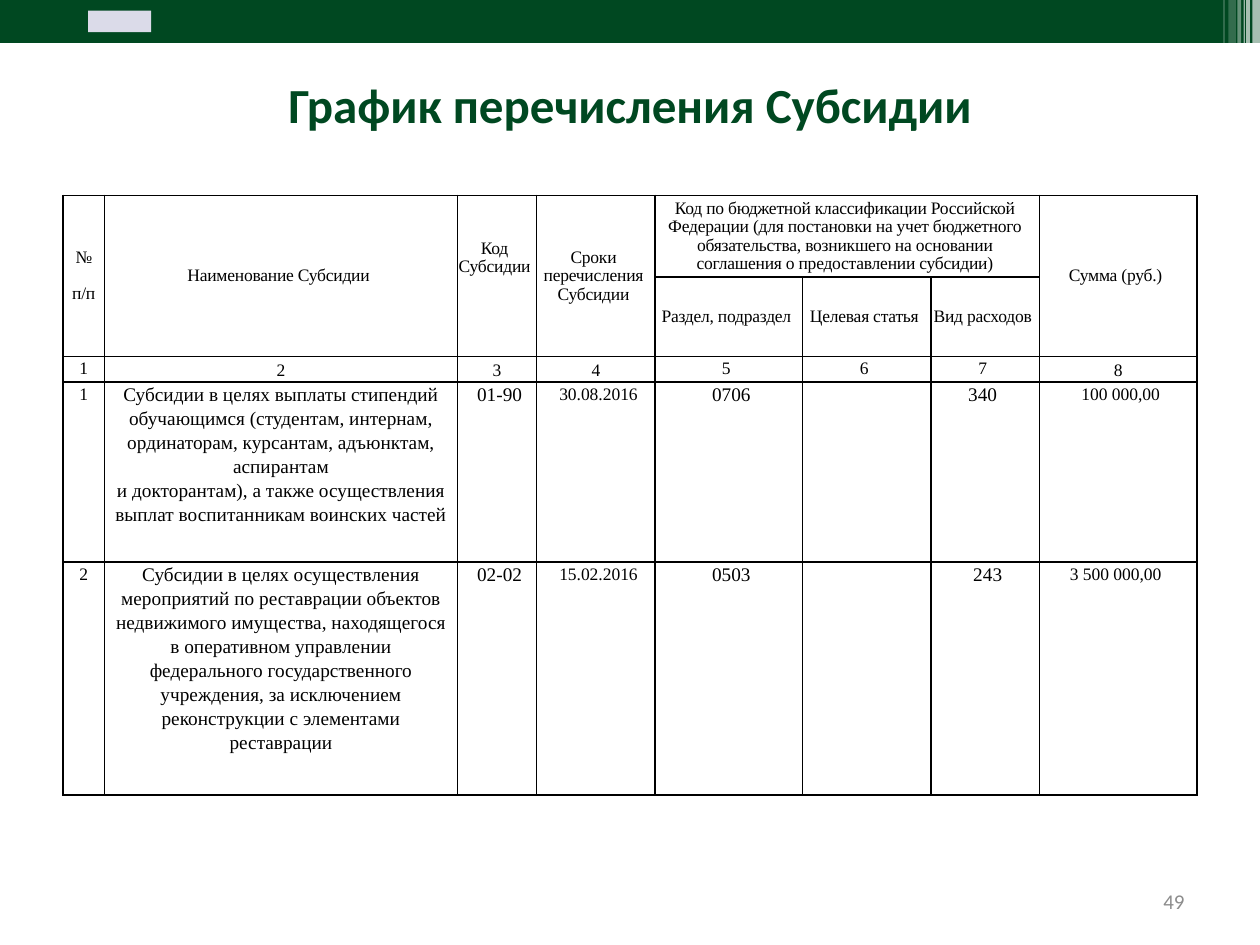
from collections import namedtuple

from lxml import etree
from pptx import Presentation
from pptx.dml.color import RGBColor
from pptx.enum.shapes import MSO_SHAPE
from pptx.enum.text import MSO_ANCHOR, PP_ALIGN
from pptx.oxml.ns import qn
from pptx.util import Inches, Pt

RECTANGLE = MSO_SHAPE.RECTANGLE
TOP, MIDDLE = MSO_ANCHOR.TOP, MSO_ANCHOR.MIDDLE
CENTER, RIGHT = PP_ALIGN.CENTER, PP_ALIGN.RIGHT

COLORS = {"green": "004821", "white": "FFFFFF", "pale": "DBDBE9",
          "gray": "8C8C8C", "black": "000000"}
WIDTH, HEIGHT = 10, 7.5
SANS, SERIF = "Calibri", "Times New Roman"

Box = namedtuple("Box", "left top width height")
Style = namedtuple("Style", "size leading after anchor left right tracking")

HEAD = Style(10, 0.96, 10, MIDDLE, 0, 0.04, -10)
EDGE = HEAD._replace(right=0)
MARK = Style(10, 1.15, 10, MIDDLE, 0, 0, 0)
SMALL = MARK._replace(anchor=TOP)
BODY = Style(11, 1.12, 0, TOP, 0.07, 0.07, 0)
SMALL_RIGHT = SMALL._replace(left=0.04)
SMALL_LEFT = SMALL._replace(right=0.04)
BODY_RIGHT = BODY._replace(left=0.11)
BODY_LEFT = BODY._replace(right=0.11)

COLUMNS = [0.33, 2.8, 0.63, 0.94, 1.17, 1.02, 0.86, 1.25]
ROWS = [0.65, 0.63, 0.2, 1.43, 1.85]
MERGES = [(0, column, 1, column) for column in (0, 1, 2, 3, 7)] + [(0, 4, 0, 6)]
STYLES = [
    [EDGE] + [HEAD] * 7,
    [HEAD] * 8,
    [SMALL] + [MARK] * 3 + [HEAD] * 3 + [MARK],
    [SMALL, BODY, BODY_RIGHT, SMALL_RIGHT, BODY_RIGHT, BODY, BODY_LEFT, SMALL_RIGHT],
    [SMALL, BODY, BODY_RIGHT, SMALL_RIGHT, BODY_RIGHT, BODY, BODY_RIGHT, SMALL_LEFT],
]
TEXTS = [
    ["№\nп/п", "Наименование Субсидии", "Код Субсидии",
     "Сроки перечисления Субсидии",
     "Код по бюджетной классификации Российской Федерации (для постановки на учет "
     "бюджетного обязательства, возникшего на основании соглашения о предоставлении "
     "субсидии)", "", "", "Сумма (руб.)"],
    ["", "", "", "", "Раздел, подраздел", "Целевая статья", "Вид расходов", ""],
    [str(number) for number in range(1, 9)],
    ["1", "Субсидии в целях выплаты стипендий обучающимся (студентам, интернам, "
     "ординаторам, курсантам, адъюнктам, аспирантам\nи докторантам), а также "
     "осуществления выплат воспитанникам воинских частей",
     "01-90", "30.08.2016", "0706", "", "340", "100 000,00"],
    ["2", "Субсидии в целях осуществления мероприятий по реставрации объектов "
     "недвижимого имущества, находящегося\nв оперативном управлении федерального "
     "государственного учреждения, за исключением реконструкции с элементами "
     "реставрации", "02-02", "15.02.2016", "0503", "", "243", "3 500 000,00"],
]


def emu(box):
    return [Inches(length) for length in box]


def add_span(para, text, font, size, color, bold=False):
    span = para.add_run()
    span.text = text
    span.font.name = font
    span.font.size = Pt(size)
    span.font.bold = bold
    span.font.color.rgb = RGBColor.from_string(COLORS[color])
    return span


def add_block(page, box, color, opacity=100):
    block = page.shapes.add_shape(RECTANGLE, *emu(box))
    block.shadow.inherit = False
    block.line.fill.background()
    block.fill.solid()
    block.fill.fore_color.rgb = RGBColor.from_string(COLORS[color])
    if opacity < 100:
        tint = block.fill._xPr.find(".//" + qn("a:srgbClr"))
        etree.SubElement(tint, qn("a:alpha"), val=str(opacity * 1000))


def add_banner(page, box):
    add_block(page, box, "green")
    stripes = [(0.06, 0.06, 65), (0.11, 0.03, 65), (0.13, 0.01, 60),
               (0.18, 0.03, 40), (0.25, 0.06, 20), (0.29, 0.01, 30)]
    for offset, width, opacity in stripes:
        left = box.left + box.width - offset
        add_block(page, Box(left, box.top, width, box.height), "white", opacity)
    emblem = Box(box.left + 0.07 * box.width, box.top + 0.25 * box.height,
                 0.05 * box.width, 0.5 * box.height)
    add_block(page, emblem, "pale")


def add_label(page, box, text, size, color, align, bold=False):
    frame = page.shapes.add_textbox(*emu(box)).text_frame
    frame.word_wrap = True
    frame.vertical_anchor = MIDDLE
    para = frame.paragraphs[0]
    para.alignment = align
    add_span(para, text, SANS, size, color, bold)


def add_borders(cell):
    properties = cell._tc.get_or_add_tcPr()
    for position, side in enumerate(("lnL", "lnR", "lnT", "lnB")):
        line = etree.Element(qn("a:" + side), w=str(Pt(1)))
        fill = etree.SubElement(line, qn("a:solidFill"))
        etree.SubElement(fill, qn("a:srgbClr"), val=COLORS["black"])
        properties.insert(position, line)


def fill_cell(cell, text, style):
    cell.fill.background()
    add_borders(cell)
    cell.vertical_anchor = style.anchor
    cell.margin_left, cell.margin_right = Inches(style.left), Inches(style.right)
    cell.margin_top = cell.margin_bottom = 0
    frame = cell.text_frame
    for index, line in enumerate(text.split("\n")):
        para = frame.add_paragraph() if index else frame.paragraphs[0]
        para.alignment = CENTER
        para.line_spacing = style.leading
        para.space_after = Pt(style.after)
        para.font.size = Pt(style.size)
        if line:
            span = add_span(para, line, SERIF, style.size, "black")
            span.font._element.set("spc", str(style.tracking))


def add_schedule(page, box):
    table = page.shapes.add_table(len(ROWS), len(COLUMNS), *emu(box)).table
    table.first_row = table.horz_banding = False
    for column, share in zip(table.columns, COLUMNS):
        column.width = Inches(box.width * share / sum(COLUMNS))
    for row, share in zip(table.rows, ROWS):
        row.height = Inches(box.height * share / sum(ROWS))
    for top, left, bottom, right in MERGES:
        table.cell(top, left).merge(table.cell(bottom, right))
    for row, (texts, styles) in enumerate(zip(TEXTS, STYLES)):
        for column, (text, style) in enumerate(zip(texts, styles)):
            fill_cell(table.cell(row, column), text, style)
    table.cell(0, 2).margin_bottom = Inches(0.29)


def main():
    deck = Presentation()
    deck.slide_width, deck.slide_height = Inches(WIDTH), Inches(HEIGHT)
    page = deck.slides.add_slide(deck.slide_layouts[6])
    add_banner(page, Box(0, 0, WIDTH, 0.34))
    add_label(page, Box(7.17, 6.95, 2.33, 0.4), "49", 12, "gray", RIGHT)
    add_label(page, Box(0, 0.21, WIDTH, 1.23), "График перечисления Субсидии",
              28, "green", CENTER, True)
    add_schedule(page, Box(0.05 * WIDTH, 1.55, 0.9 * WIDTH, sum(ROWS)))
    deck.save("out.pptx")


if __name__ == "__main__":
    main()
